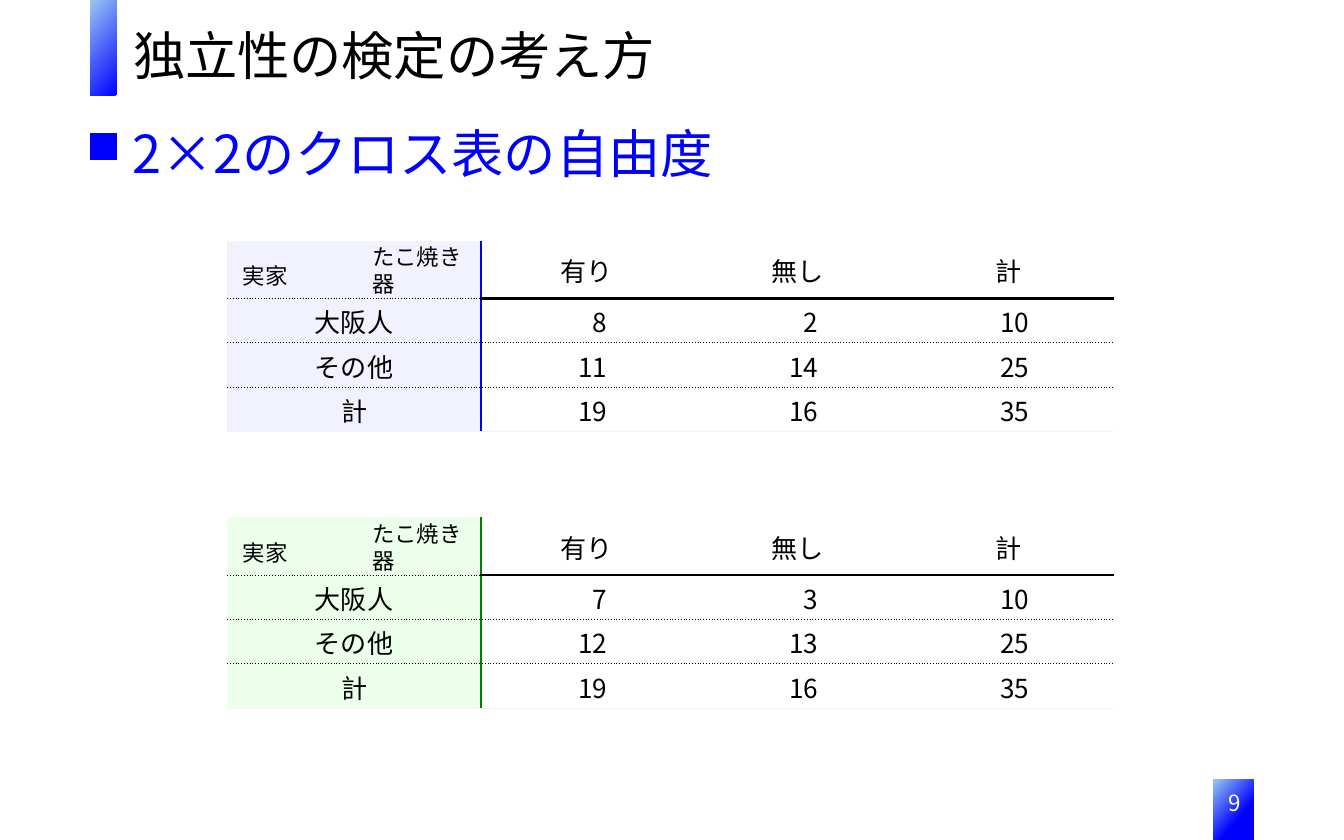
"""Build a slide on the degrees of freedom of a 2×2 cross table."""
from dataclasses import dataclass

from lxml.etree import SubElement
from pptx import Presentation
from pptx.dml.color import RGBColor as RGB
from pptx.enum.shapes import MSO_SHAPE as Shape
from pptx.enum.text import MSO_ANCHOR as Anchor, PP_ALIGN as Align
from pptx.oxml.ns import qn
from pptx.util import Inches, Pt


@dataclass(frozen=True)
class Theme:
    font: str = "Noto Sans CJK JP"
    head: int = 28
    body: int = 14
    small: int = 12
    ink: str = "000000"
    white: str = "FFFFFF"
    blue: str = "0000FF"
    sky: str = "99C8F0"
    green: str = "008000"
    pale: str = "F2F2FF"
    mint: str = "EBFFEB"


THEME = Theme()
HEADS = ["", "有り", "無し", "計"]
BLUE_ROWS = [["大阪人", "8", "2", "10"], ["その他", "11", "14", "25"], ["計", "19", "16", "35"]]
GREEN_ROWS = [["大阪人", "7", "3", "10"], ["その他", "12", "13", "25"], ["計", "19", "16", "35"]]


def set_text(frame, text, size, color=THEME.ink, align=Align.LEFT):
    frame.text = text
    para = frame.paragraphs[0]
    para.alignment = align
    for run in para.runs:
        font = run.font
        font.name, font.size = THEME.font, Pt(size)
        font.color.rgb = RGB.from_string(color)
        SubElement(font._element, qn("a:ea"), typeface=THEME.font)


def add_text(slide, box, text, size, color=THEME.ink, align=Align.LEFT):
    frame = slide.shapes.add_textbox(*map(Inches, box)).text_frame
    frame.word_wrap = True
    set_text(frame, text, size, color, align)
    return frame


def add_block(slide, box, kind=Shape.RECTANGLE):
    block = slide.shapes.add_shape(kind, *map(Inches, box))
    block.shadow.inherit = False
    block.line.fill.background()
    block.fill.solid()
    block.fill.fore_color.rgb = RGB.from_string(THEME.blue)
    return block


def add_fade(slide, box, start):
    block = add_block(slide, box, Shape.ROUNDED_RECTANGLE)
    block.adjustments[0] = 0
    block.fill.gradient()
    block.fill.gradient_angle = 140
    stops = zip(block.fill.gradient_stops, (start, 1), (THEME.blue, THEME.sky))
    for stop, place, color in stops:
        stop.position = place
        stop.color.rgb = RGB.from_string(color)


def add_edge(cell, side, edge):
    props = cell._tc.get_or_add_tcPr()
    if edge is None:
        SubElement(SubElement(props, qn(f"a:ln{side}"), w="0"), qn("a:noFill"))
        return
    color, width, dash = edge
    line = SubElement(props, qn(f"a:ln{side}"), w=str(Pt(width)))
    SubElement(SubElement(line, qn("a:solidFill")), qn("a:srgbClr"), val=color)
    SubElement(line, qn("a:prstDash"), val=dash)


def get_edges(row, col, accent):
    """Give the left, right, top and bottom edges of a cell."""
    bar = (accent, 1.5, "solid")
    dots = (THEME.ink, 0.5, "sysDot")
    rule = dots if col == 0 else (THEME.ink, 1.5, "solid")
    lines = [None, rule, dots, dots, (THEME.pale, 0.5, "solid")]
    return {"L": bar if col == 1 else None, "R": bar if col == 0 else None,
            "T": lines[row], "B": lines[row + 1]}


def set_cell(cell, text, row, col, accent, tint):
    number = row > 0 and col > 0
    cell.margin_left = Inches(0.1)
    cell.margin_right = Inches(0.63 if number else 0.1)
    cell.margin_top, cell.margin_bottom = Inches(0.01), 0
    cell.vertical_anchor = Anchor.MIDDLE
    set_text(cell.text_frame, text, THEME.body,
             align=Align.RIGHT if number else Align.CENTER)
    for side, edge in get_edges(row, col, accent).items():
        add_edge(cell, side, edge)
    if col:
        cell.fill.background()
    else:
        cell.fill.solid()
        cell.fill.fore_color.rgb = RGB.from_string(tint)


def add_cross(slide, top, rows, accent, tint):
    """Add one cross table with the two labels of its corner cell."""
    box = map(Inches, (1.69, top, 6.6, 1.42))
    table = slide.shapes.add_table(4, 4, *box).table
    table.first_row = table.horz_banding = False
    for i, column in enumerate(table.columns):
        column.width = Inches(1.57 if i else 1.89)
    for r, values in enumerate([HEADS, *rows]):
        table.rows[r].height = Inches(0.33 if r else 0.43)
        for c, value in enumerate(values):
            set_cell(table.cell(r, c), value, r, c, accent, tint)
    add_text(slide, (1.71, top + 0.11, 0.54, 0.3), "実家", THEME.small)
    add_text(slide, (2.67, top - 0.03, 0.96, 0.3), "たこ焼き器", THEME.small)


def set_title(slide, text):
    title = slide.shapes.title
    title.left, title.top = Inches(0.89), Inches(0.12)
    title.width, title.height = Inches(9.09), Inches(0.57)
    title.text_frame.vertical_anchor = Anchor.MIDDLE
    set_text(title.text_frame, text, THEME.head)


def main():
    deck = Presentation()
    deck.slide_width, deck.slide_height = Inches(10), Inches(6.25)
    slide = deck.slides.add_slide(deck.slide_layouts[5])
    add_fade(slide, (9.03, 5.8, 0.3, 0.45), 0.36)
    add_text(slide, (8.81, 5.82, 0.75, 0.33), "9", THEME.small, THEME.white, Align.CENTER)
    add_fade(slide, (0.67, 0, 0.2, 0.71), 0)
    frame = add_text(slide, (0.89, 0.76, 8.97, 0.67), "2×2のクロス表の自由度",
                     THEME.head, THEME.blue)
    frame.paragraphs[0].line_spacing = 1.2
    add_block(slide, (0.67, 0.99, 0.2, 0.2))
    add_cross(slide, 1.79, BLUE_ROWS, THEME.blue, THEME.pale)
    add_cross(slide, 3.85, GREEN_ROWS, THEME.green, THEME.mint)
    set_title(slide, "独立性の検定の考え方")
    deck.save("out.pptx")


if __name__ == "__main__":
    main()
